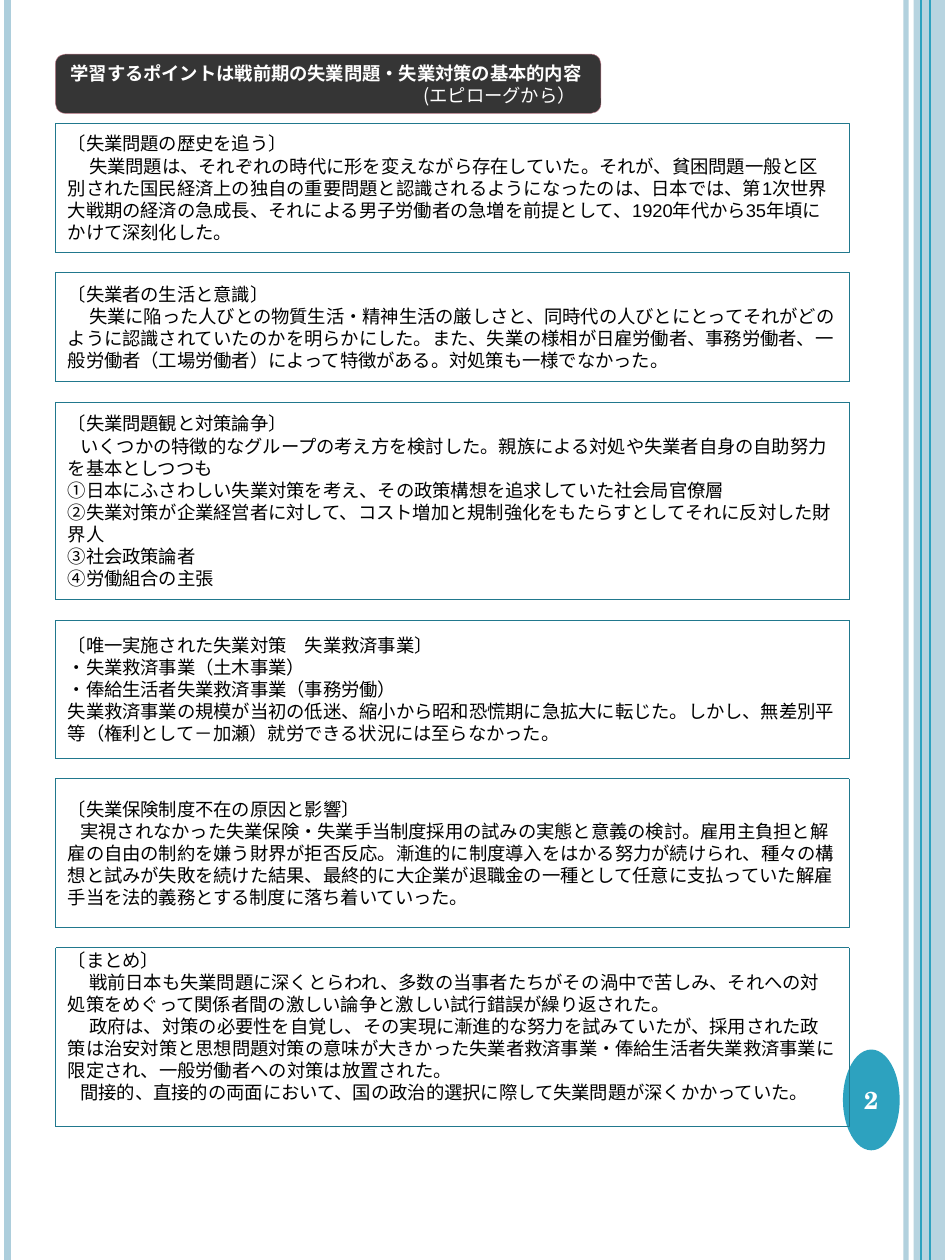
from dataclasses import dataclass

from lxml import etree
from pptx import Presentation
from pptx.dml.color import RGBColor
from pptx.enum.dml import MSO_LINE
from pptx.enum.shapes import MSO_CONNECTOR, MSO_SHAPE
from pptx.enum.text import MSO_ANCHOR, MSO_AUTO_SIZE, PP_ALIGN
from pptx.oxml.ns import qn
from pptx.util import Inches, Pt

STRAIGHT = MSO_CONNECTOR.STRAIGHT
RECT, ROUND, OVAL = MSO_SHAPE.RECTANGLE, MSO_SHAPE.ROUNDED_RECTANGLE, MSO_SHAPE.OVAL
MIDDLE = MSO_ANCHOR.MIDDLE
LEFT, CENTER, RIGHT = PP_ALIGN.LEFT, PP_ALIGN.CENTER, PP_ALIGN.RIGHT

BLACK = RGBColor(0x00, 0x00, 0x00)
WHITE = RGBColor(0xFF, 0xFF, 0xFF)
DARK = RGBColor(0x35, 0x35, 0x35)
ROSE = RGBColor(0xC0, 0x7B, 0x8A)
PALE = RGBColor(0xAD, 0xCE, 0xDC)
TEAL = RGBColor(0x2D, 0xA2, 0xBF)
DEEP = RGBColor(0x21, 0x78, 0x8D)

SANS, SERIF, KANJI = "Arial", "TeX Gyre Schola", "Noto Sans CJK JP"
WIDE, HIGH = 7.5, 10
EDGE, TOP, SPAN, GAP = 0.44, 0.98, 6.3, 0.16


@dataclass
class Stripe:
    x: float
    color: RGBColor
    width: float
    alpha: int = 100


@dataclass
class Para:
    text: str
    indent: float = 0
    font: str = SANS


@dataclass
class Panel:
    height: float
    paras: list[Para]
    bottom: float = 0.05


STRIPES = [Stripe(7.19, PALE, 3, 93), Stripe(0.06, PALE, 4.5),
           Stripe(7.38, TEAL, 1.5), Stripe(7.31, TEAL, 0.75)]

PANELS = [
    Panel(1.02, [
        Para("〔失業問題の歴史を追う〕"),
        Para("失業問題は、それぞれの時代に形を変えながら存在していた。それが、貧困問題一般と区別された"
             "国民経済上の独自の重要問題と認識されるようになったのは、日本では、第1次世界大戦期の経済の"
             "急成長、それによる男子労働者の急増を前提として、1920年代から35年頃にかけて深刻化した。", 0.17),
    ]),
    Panel(0.87, [
        Para("〔失業者の生活と意識〕", font=SERIF),
        Para("失業に陥った人びとの物質生活・精神生活の厳しさと、同時代の人びとにとってそれがどのように"
             "認識されていたのかを明らかにした。また、失業の様相が日雇労働者、事務労働者、一般労働者"
             "（工場労働者）によって特徴がある。対処策も一様でなかった。", 0.17, SERIF),
    ]),
    Panel(1.57, [
        Para("〔失業問題観と対策論争〕"),
        Para("いくつかの特徴的なグループの考え方を検討した。親族による対処や失業者自身の自助努力を"
             "基本としつつも", 0.1),
        Para("①日本にふさわしい失業対策を考え、その政策構想を追求していた社会局官僚層"),
        Para("②失業対策が企業経営者に対して、コスト増加と規制強化をもたらすとしてそれに反対した財界人"),
        Para("③社会政策論者"),
        Para("④労働組合の主張"),
    ]),
    Panel(1.1, [
        Para("〔唯一実施された失業対策　失業救済事業〕"),
        Para("・失業救済事業（土木事業）"),
        Para("・俸給生活者失業救済事業（事務労働）", font=SERIF),
        Para("失業救済事業の規模が当初の低迷、縮小から昭和恐慌期に急拡大に転じた。しかし、無差別平等"
             "（権利として－加瀬）就労できる状況には至らなかった。", font=SERIF),
    ]),
    Panel(1.18, [
        Para("〔失業保険制度不在の原因と影響〕"),
        Para("実視されなかった失業保険・失業手当制度採用の試みの実態と意義の検討。雇用主負担と解雇の"
             "自由の制約を嫌う財界が拒否反応。漸進的に制度導入をはかる努力が続けられ、種々の構想と試みが"
             "失敗を続けた結果、最終的に大企業が退職金の一種として任意に支払っていた解雇手当を法的義務と"
             "する制度に落ち着いていった。", 0.1),
    ]),
    Panel(1.42, [
        Para("〔まとめ〕"),
        Para("戦前日本も失業問題に深くとらわれ、多数の当事者たちがその渦中で苦しみ、それへの対処策を"
             "めぐって関係者間の激しい論争と激しい試行錯誤が繰り返された。", 0.17),
        Para("政府は、対策の必要性を自覚し、その実現に漸進的な努力を試みていたが、採用された政策は"
             "治安対策と思想問題対策の意味が大きかった失業者救済事業・俸給生活者失業救済事業に限定され、"
             "一般労働者への対策は放置された。", 0.17),
        Para("間接的、直接的の両面において、国の政治的選択に際して失業問題が深くかかっていた。", 0.1),
    ], bottom=0.22),
]


def fade(shape, alpha: int) -> None:
    """Set the opacity, in percent, of the shape's colours."""
    for tint in shape.element.iter(qn("a:srgbClr")):
        etree.SubElement(tint, qn("a:alpha")).set("val", str(alpha * 1000))


def add_stripe(slide, stripe: Stripe) -> None:
    x = Inches(stripe.x)
    line = slide.shapes.add_connector(STRAIGHT, x, 0, x, Inches(HIGH))
    line.line.color.rgb = stripe.color
    line.line.width = Pt(stripe.width)
    etree.SubElement(line.element.spPr, qn("a:effectLst"))
    if stripe.alpha < 100:
        fade(line, stripe.alpha)


def add_block(slide, kind, box: tuple, fill: RGBColor | None = None,
              edge: RGBColor | None = None):
    shape = slide.shapes.add_shape(kind, *map(Inches, box))
    shape.shadow.inherit = False
    if fill is None:
        shape.fill.background()
    else:
        shape.fill.solid()
        shape.fill.fore_color.rgb = fill
    if edge is None:
        shape.line.fill.background()
    else:
        shape.line.color.rgb = edge
        shape.line.width = Pt(0.25)
    return shape


def set_frame(shape, sides: tuple):
    """Prepare the text frame; sides are the left, top, right and bottom insets."""
    frame = shape.text_frame
    frame.word_wrap = True
    frame.auto_size = MSO_AUTO_SIZE.NONE
    frame.vertical_anchor = MIDDLE
    (frame.margin_left, frame.margin_top,
     frame.margin_right, frame.margin_bottom) = map(Inches, sides)
    return frame


def write(frame, paras: list[Para], color: RGBColor, align=LEFT,
          size: float = 10.5, bold: bool = False) -> None:
    frame.text = "\n".join(para.text for para in paras)
    for line, para in zip(frame.paragraphs, paras):
        line.alignment = align
        line.line_spacing = Pt(size * 1.2)
        font = line.font
        font.name, font.size, font.bold = para.font, Pt(size), bold
        font.color.rgb = color
        props = line._p.get_or_add_pPr()
        props.set("indent", str(Inches(para.indent)))
        etree.SubElement(props.find(qn("a:defRPr")), qn("a:ea")).set("typeface", KANJI)


def add_title(slide) -> None:
    box = (EDGE, 0.43, 4.33, 0.47)
    add_block(slide, ROUND, box, DARK, ROSE)
    title = slide.shapes.title
    title.left, title.top, title.width, title.height = map(Inches, box)
    slide.shapes._spTree.append(title.element)
    frame = set_frame(title, (0.12, 0.05, 0.1, 0.05))
    write(frame, [Para("学習するポイントは戦前期の失業問題・失業対策の基本的内容", font=KANJI),
                  Para("(エピローグから）", font=KANJI)], WHITE, bold=True)
    note = frame.paragraphs[1]
    note.alignment = RIGHT
    note.font.bold = False
    note._p.pPr.set("marR", str(Inches(0.1)))


def main() -> None:
    deck = Presentation()
    deck.slide_width, deck.slide_height = Inches(WIDE), Inches(HIGH)
    slide = deck.slides.add_slide(deck.slide_layouts[5])

    band = add_block(slide, RECT, (7.25, 0, 0.25, HIGH), PALE)
    fade(band, 87)
    for stripe in STRIPES:
        add_stripe(slide, stripe)

    badge = add_block(slide, OVAL, (6.69, 8.33, 0.45, 0.8), TEAL)
    write(set_frame(badge, (0, 0, 0, 0)), [Para("2", font=SERIF)],
          WHITE, CENTER, 14, True)

    top = TOP
    for panel in PANELS:
        block = add_block(slide, RECT, (EDGE, top, SPAN, panel.height), edge=DEEP)
        block.line.dash_style = MSO_LINE.ROUND_DOT
        write(set_frame(block, (0.1, 0.05, 0.1, panel.bottom)), panel.paras, BLACK)
        top += panel.height + GAP

    add_title(slide)
    deck.save("out.pptx")


if __name__ == "__main__":
    main()
